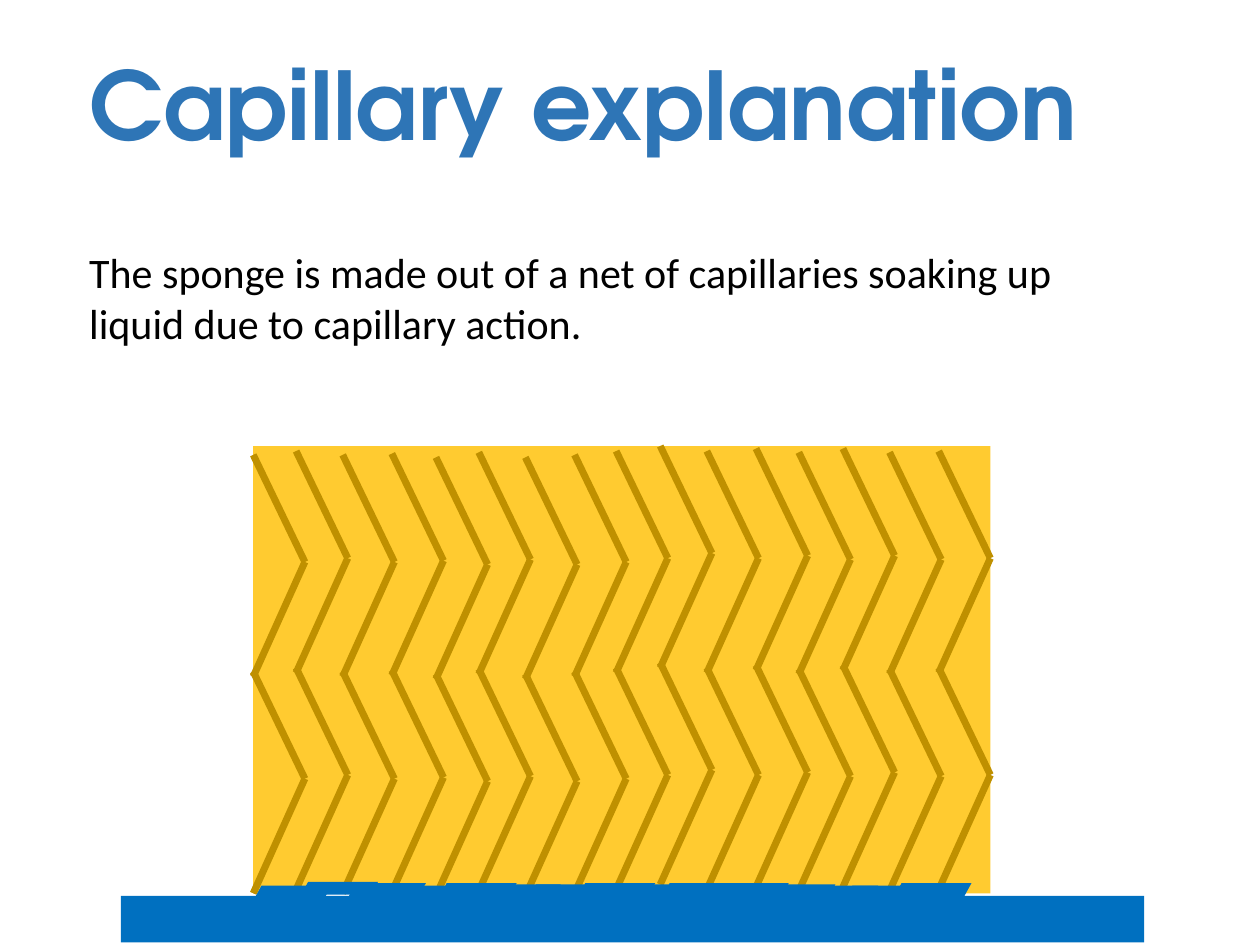
from lxml import etree
from pptx import Presentation
from pptx import util as u
from pptx.dml.color import RGBColor
from pptx.enum import shapes, text
from pptx.oxml.ns import qn

PX = 9144  # EMU; 100 px to the inch

TITLE = "Capillary explanation"
BODY = ("The sponge is made out of a net of capillaries soaking up "
        "liquid due to capillary action.")

SPONGE, CAPILLARY, WATER = "FFC000", "BF9000", "0070C0"
# (left, top) of each zigzag capillary
CAPILLARIES = [
    (201, 361), (235, 358), (272, 361), (311, 360), (346, 363), (380, 359),
    (417, 363), (456, 361), (489, 358), (524, 354), (561, 358), (600, 356),
    (634, 359), (669, 356), (706, 359), (745, 358),
]
BEND = 41                # width of a zigzag
HALVES = (172, 0)        # the lower half is drawn first
HALF_MIDDLE, HALF_BOTTOM = 85, 176
# (left, top) of each ripple where the water enters the sponge
RIPPLES = [
    (202, 703), (239, 700), (277, 701), (313, 703), (349, 701),
    (384, 702), (420, 702), (459, 701), (490, 702), (526, 701),
    (565, 701), (602, 702), (636, 703), (671, 703), (710, 701),
]


def px(*lengths):
    return [u.Emu(length * PX) for length in lengths]


def colour(value):
    return RGBColor.from_string(value)


def add_block(page, kind, place, fill):
    block = page.shapes.add_shape(kind, *px(*place))
    block.shadow.inherit = False
    block.fill.solid()
    block.fill.fore_color.rgb = colour(fill)
    block.line.fill.background()
    return block


def add_line(page, start, end):
    line = page.shapes.add_connector(
        shapes.MSO_CONNECTOR.STRAIGHT, *px(*start, *end))
    line.line.color.rgb = colour(CAPILLARY)
    line.line.width = u.Pt(4)
    etree.SubElement(line._element.spPr, qn("a:effectLst"))


def set_text(box, place, words, font, size, fill, bold=False):
    box.left, box.top, box.width, box.height = px(*place)
    frame = box.text_frame
    frame.text = words
    frame.word_wrap = True
    paragraph = frame.paragraphs[0]
    paragraph.alignment = text.PP_ALIGN.LEFT
    style = paragraph.runs[0].font
    style.name, style.size, style.bold = font, u.Pt(size), bold
    style.color.rgb = colour(fill)
    return frame


def add_capillary(page, left, top):
    right = left + BEND
    for half in HALVES:
        start = top + half
        middle = start + HALF_MIDDLE
        add_line(page, (left, start + HALF_BOTTOM), (right, middle))
        add_line(page, (right, middle), (left, start))


def main():
    deck = Presentation()
    deck.slide_width, deck.slide_height = px(1000, 750)
    page = deck.slides.add_slide(deck.slide_layouts.get_by_name("Title Only"))

    frame = set_text(page.shapes.title, (61, 37, 862, 101), TITLE,
                     "TeX Gyre Adventor", 54, "2E75B6", bold=True)
    frame.auto_size = text.MSO_AUTO_SIZE.NONE
    frame.vertical_anchor = text.MSO_ANCHOR.MIDDLE
    frame.paragraphs[0].line_spacing = 0.9

    rectangle = shapes.MSO_SHAPE.RECTANGLE
    sponge = add_block(page, rectangle, (201, 354, 585, 355), SPONGE)
    tint = sponge._element.spPr.find(qn("a:solidFill"))[0]
    etree.SubElement(tint, qn("a:alpha"), val="81000")

    for left, top in CAPILLARIES:
        add_capillary(page, left, top)

    place = (61, 191, 847, 91)
    frame = set_text(page.shapes.add_textbox(*px(*place)), place, BODY,
                     "Calibri", 24, "000000")
    frame.auto_size = text.MSO_AUTO_SIZE.SHAPE_TO_FIT_TEXT

    add_block(page, rectangle, (96, 711, 812, 37), WATER)
    for left, top in RIPPLES:
        ripple = add_block(page, shapes.MSO_SHAPE.PARALLELOGRAM,
                           (left, top, 61, 10), WATER)
        ripple.adjustments[0] = 0.55

    deck.save("out.pptx")


if __name__ == "__main__":
    main()
